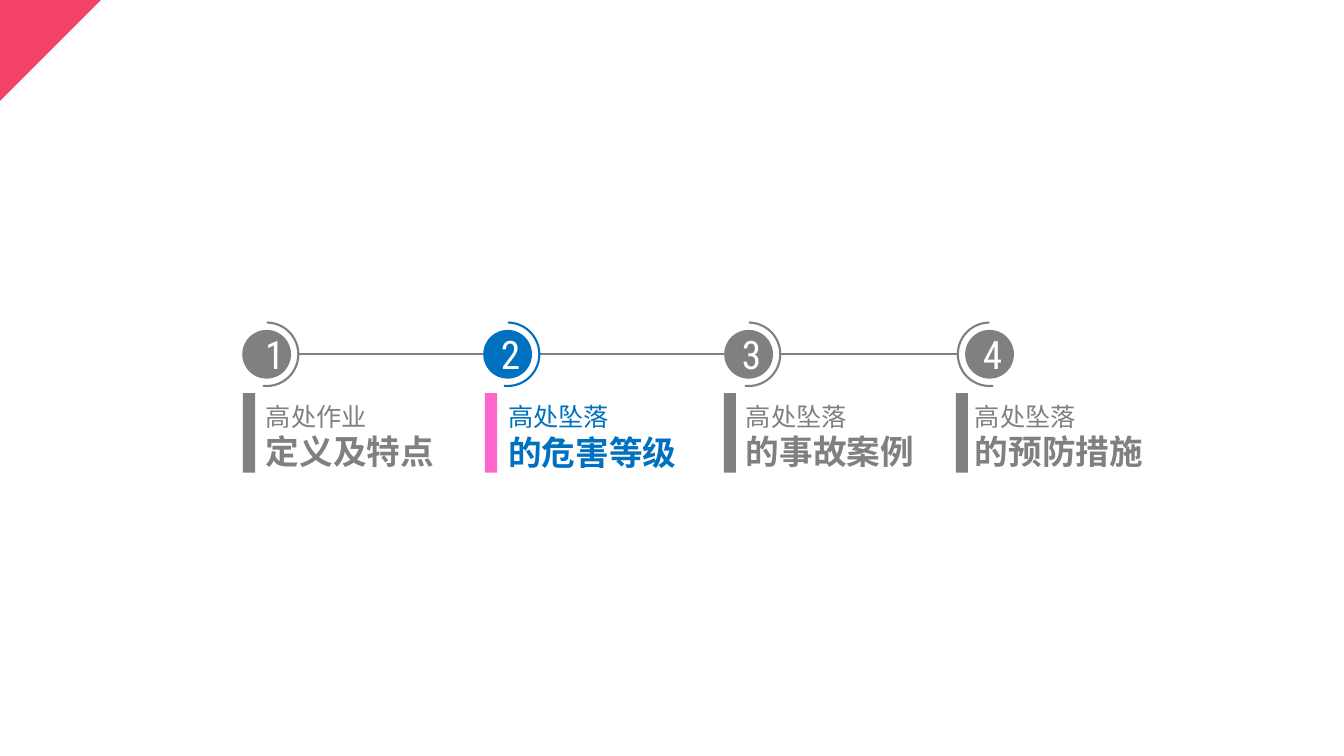
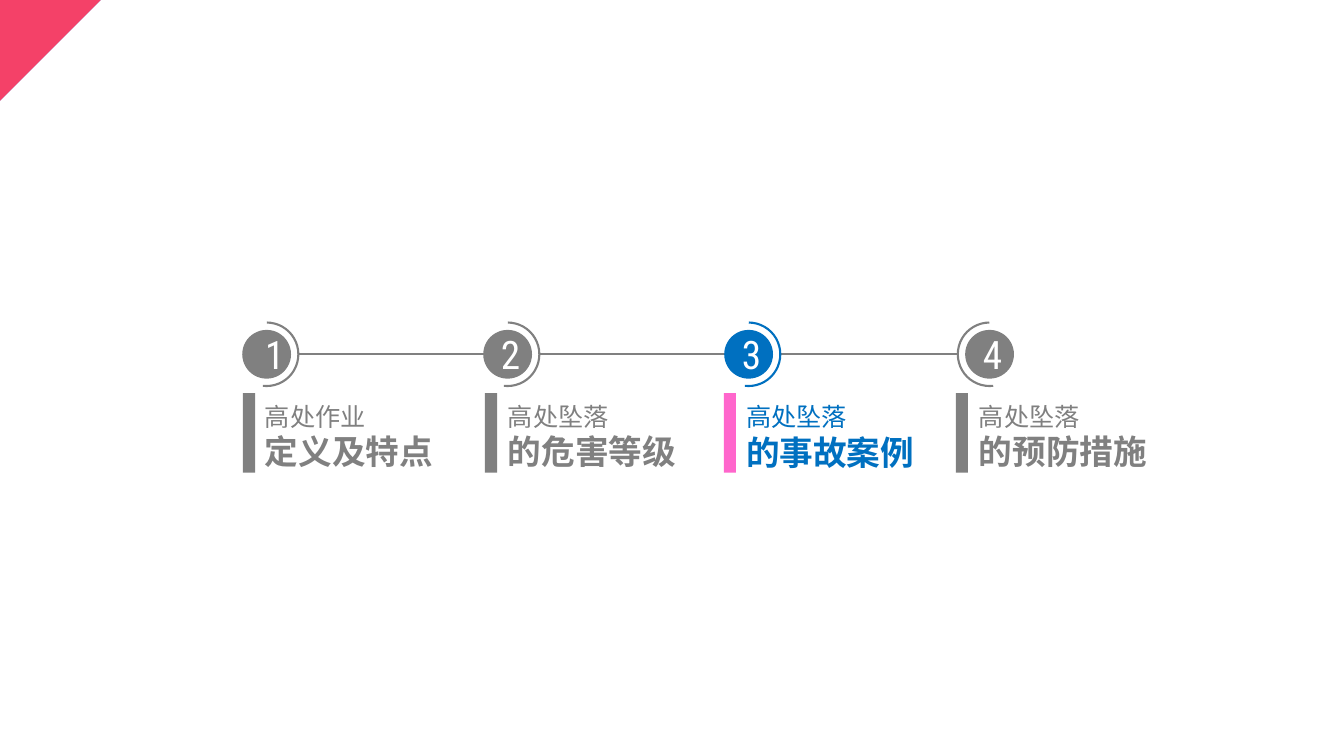
from lxml.etree import SubElement
from pptx import Presentation
from pptx.dml.color import RGBColor
from pptx.enum.shapes import MSO_CONNECTOR, MSO_SHAPE
from pptx.enum.text import MSO_ANCHOR, MSO_AUTO_SIZE, PP_ALIGN
from pptx.oxml.ns import qn
from pptx.util import Inches, Pt

GRAY, BLUE, PINK, WHITE = "808080", "0070C0", "FF66CC", "FFFFFF"

# Grid: one column per chapter, measured in inches
FIRST_COLUMN, COLUMN_WIDTH = 2.41, 2.39
DISC_TOP, DISC_SIZE = 3.28, 0.47
RING_GAP = 0.08
RING_SIZE = DISC_SIZE + 2 * RING_GAP
BAR_TOP, BAR_WIDTH, BAR_HEIGHT = 3.9, 0.12, 0.79
LABEL_TOP, LABEL_WIDTH, LABEL_HEIGHT = 3.93, 1.87, 0.81

# Label lines, number left and width, bar left, label left on each slide
CHAPTERS = [
    ("高处作业", "定义及特点", 2.53, 0.28, 2.41, (2.54, 2.53)),
    ("高处坠落", "的危害等级", 4.87, 0.35, 4.81, (4.94, 4.94)),
    ("高处坠落", "的事故案例", 7.26, 0.36, 7.18, (7.3, 7.3)),
    ("高处坠落", "的预防措施", 9.65, 0.35, 9.48, (9.57, 9.61)),
]
ACTIVE_CHAPTERS = [1, 2]

CORNER_RAYS = [
    ("1D087D", [(0, 0), (1.14, 0), (0.98, 0.13), (0.39, 0.56), (0, 0.82)]),
    ("F4F9A7", [(1.21, 0), (0.81, 0.38), (0.22, 0.97), (0, 1.21), (0, 1.01),
                (0.09, 0.94)]),
    ("F477FF", [(1.14, 0), (1.21, 0), (1.09, 0.1), (0.66, 0.47), (0.09, 0.94),
                (0, 1.01), (0, 0.82), (0.89, 0.21)]),
    ("F44168", [(0.92, 0), (1.14, 0), (0.89, 0.2), (0.45, 0.52), (0, 0.82),
                (0, 0.43), (0.14, 0.37), (0.43, 0.24), (0.68, 0.12)]),
]


def color(hex_string):
    return RGBColor.from_string(hex_string)


def write_lines(box, lines, hex_string, font_name):
    """Fill a box with one paragraph per (text, size, bold) line."""
    frame = box.text_frame
    frame.word_wrap = False
    frame.auto_size = MSO_AUTO_SIZE.NONE
    frame.vertical_anchor = MSO_ANCHOR.TOP
    for index, (text, size, bold) in enumerate(lines):
        para = frame.add_paragraph() if index else frame.paragraphs[0]
        para.alignment = PP_ALIGN.LEFT
        span = para.add_run()
        span.text = text
        span.font.size = Pt(size)
        span.font.bold = bold
        span.font.name = font_name
        span.font.color.rgb = color(hex_string)


deck = Presentation()
deck.slide_width, deck.slide_height = Inches(13.33), Inches(7.5)
layout = deck.slide_layouts.get_by_name("Title Only")
pages = [deck.slides.add_slide(layout) for _ in ACTIVE_CHAPTERS]

# The corner rays belong to the layout, so both pages share them
for hex_string, points in CORNER_RAYS:
    builder = pages[0].shapes.build_freeform(*points[0], scale=Inches(1))
    builder.add_line_segments(points[1:], close=True)
    ray = builder.convert_to_shape()
    ray.shadow.inherit = False
    ray.fill.solid()
    ray.fill.fore_color.rgb = color(hex_string)
    ray.line.fill.background()
    layout.shapes.element.append(ray.element)

for page_index, (page, active) in enumerate(zip(pages, ACTIVE_CHAPTERS)):
    shapes = page.shapes
    last = len(CHAPTERS) - 1

    # Lines run from each ring to the next disc, or to the last, mirrored ring
    for column in range(last):
        left = FIRST_COLUMN + column * COLUMN_WIDTH
        start = left + DISC_SIZE + RING_GAP
        end = left + COLUMN_WIDTH - (RING_GAP if column + 1 == last else 0)
        middle = Inches(DISC_TOP + DISC_SIZE / 2)
        link = shapes.add_connector(
            MSO_CONNECTOR.STRAIGHT, Inches(start), middle, Inches(end), middle)
        link.line.color.rgb = color(GRAY)
        link.line.width = Pt(1.5)
        SubElement(link.element.spPr, qn("a:effectLst"))

    for column, chapter in enumerate(CHAPTERS):
        topic, heading, number_left, number_width, bar_left, label_lefts = chapter
        is_active = column == active
        accent = BLUE if is_active else GRAY
        left = FIRST_COLUMN + column * COLUMN_WIDTH

        disc = shapes.add_shape(
            MSO_SHAPE.OVAL, Inches(left), Inches(DISC_TOP),
            Inches(DISC_SIZE), Inches(DISC_SIZE))
        bar = shapes.add_shape(
            MSO_SHAPE.RECTANGLE, Inches(bar_left), Inches(BAR_TOP),
            Inches(BAR_WIDTH), Inches(BAR_HEIGHT))
        for shape, fill in ((disc, accent), (bar, PINK if is_active else GRAY)):
            shape.shadow.inherit = False
            shape.fill.solid()
            shape.fill.fore_color.rgb = color(fill)
        disc.line.color.rgb = color(accent)
        disc.line.width = Pt(1)
        bar.line.fill.background()

        ring = shapes.add_shape(
            MSO_SHAPE.ARC, Inches(left - RING_GAP), Inches(DISC_TOP - RING_GAP),
            Inches(RING_SIZE), Inches(RING_SIZE))
        ring.shadow.inherit = False
        ring.fill.background()
        ring.line.color.rgb = color(accent)
        ring.line.width = Pt(1.5)
        ring.adjustments[0], ring.adjustments[1] = 162.3, 57.98
        if column == last:
            ring.element.spPr.xfrm.set("flipH", "1")

        number = shapes.add_textbox(
            Inches(number_left), Inches(3.23), Inches(number_width), Inches(0.57))
        write_lines(number, [(str(column + 1), 28, False)], WHITE, "Roboto Condensed")

        place = (Inches(label_lefts[page_index]), Inches(LABEL_TOP),
                 Inches(LABEL_WIDTH), Inches(LABEL_HEIGHT))
        if is_active:
            label = shapes.title
            label.left, label.top, label.width, label.height = place
        else:
            label = shapes.add_textbox(*place)
        write_lines(label, [(topic, 18, False), (heading, 24, True)], accent, "Arial")

deck.save("out.pptx")
